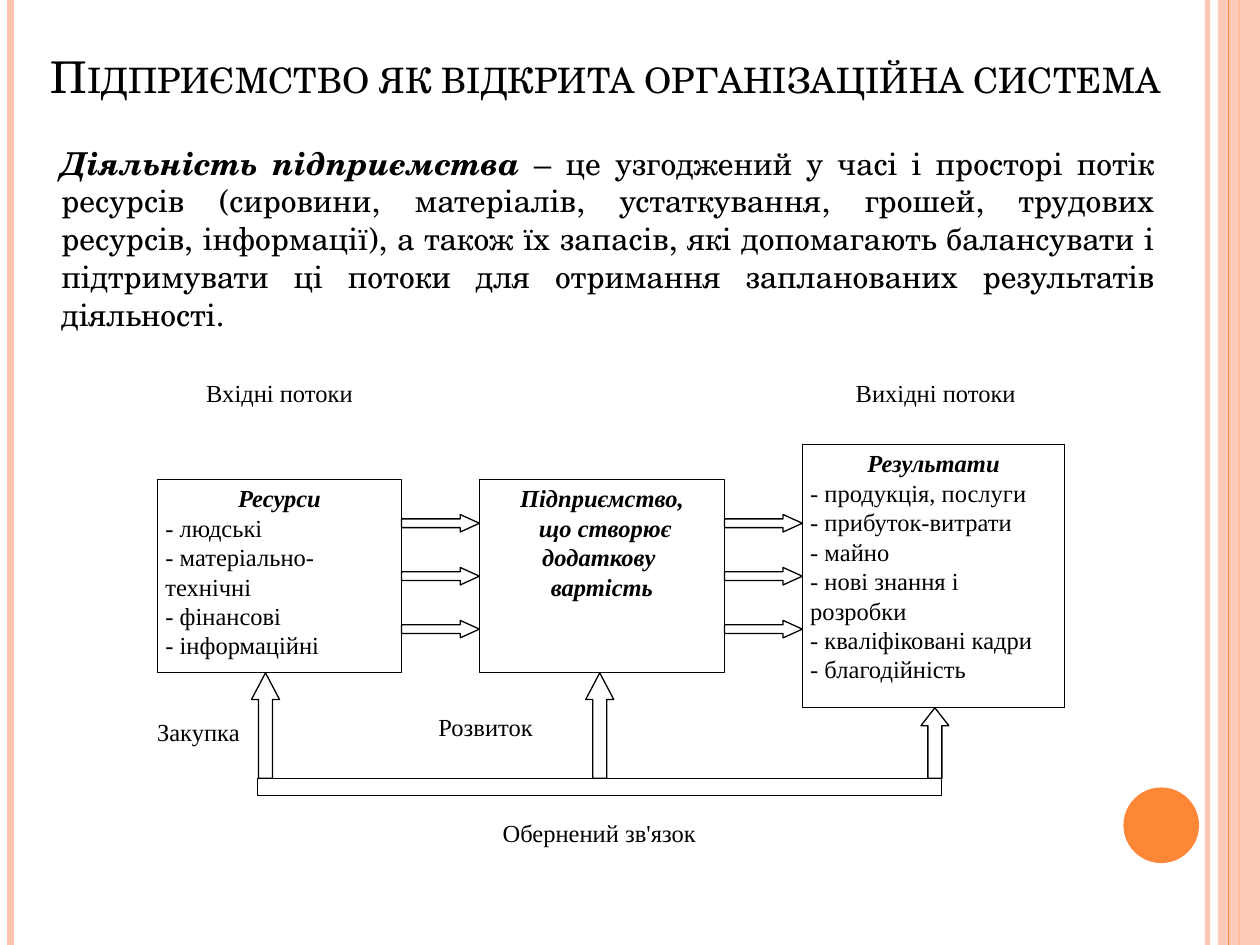
from lxml.etree import SubElement
from pptx import Presentation
from pptx.dml.color import RGBColor
from pptx.enum.shapes import MSO_CONNECTOR, MSO_SHAPE
from pptx.enum.text import MSO_ANCHOR, PP_ALIGN
from pptx.oxml.ns import qn
from pptx.util import Pt

COLORS = {"black": "000000", "white": "FFFFFF", "orange": "FE8637", "peach": "FEC3AE"}
HEADING_FONT, DIAGRAM_FONT = "TeX Gyre Schola", "Times New Roman"
DIAGRAM_SIZE = 14
PAGE_WIDTH, PAGE_HEIGHT = 720, 540


def color(name):
    return RGBColor.from_string(COLORS[name])


def points(box):
    return [Pt(length) for length in box]


def set_alpha(fill_parent, percent):
    rgb = fill_parent.find(".//" + qn("a:srgbClr"))
    SubElement(rgb, qn("a:alpha"), val=str(percent * 1000))


def style_run(run, font, size, emphasis=False):
    run.font.name = font
    run.font.size = Pt(size)
    run.font.bold = run.font.italic = emphasis
    run.font.color.rgb = color("black")


def add_block(page, kind, box, fill="white", line="black"):
    shape = page.shapes.add_shape(kind, *points(box))
    shape.shadow.inherit = False
    shape.fill.solid()
    shape.fill.fore_color.rgb = color(fill)
    if line:
        shape.line.color.rgb = color(line)
        shape.line.width = Pt(0.75)
    else:
        shape.line.fill.background()
    return shape


def add_stripe(page, x, width, name, alpha=100):
    stripe = page.shapes.add_connector(
        MSO_CONNECTOR.STRAIGHT, Pt(x), Pt(0), Pt(x), Pt(PAGE_HEIGHT))
    stripe.line.color.rgb = color(name)
    stripe.line.width = Pt(width)
    properties = stripe._element.spPr
    set_alpha(properties, alpha)
    SubElement(properties, qn("a:effectLst"))


def add_text_box(page, box, heading=None, items=(), line="black",
                 item_align=PP_ALIGN.LEFT):
    """A rectangle with an optional bold italic heading above plain lines."""
    frame = add_block(page, MSO_SHAPE.RECTANGLE, box, line=line).text_frame
    frame.word_wrap = True
    frame.vertical_anchor = MSO_ANCHOR.TOP
    frame.margin_left = frame.margin_right = Pt(4.5)
    frame.margin_top = frame.margin_bottom = Pt(2.25)
    rows = [(heading, PP_ALIGN.CENTER, True)] if heading else []
    rows += [(item, item_align, False) for item in items]
    for index, (text, align, emphasis) in enumerate(rows):
        para = frame.add_paragraph() if index else frame.paragraphs[0]
        para.text = text
        para.alignment = align
        for span in para.runs:
            style_run(span, DIAGRAM_FONT, DIAGRAM_SIZE, emphasis)
        for line_break in para._p.findall(qn("a:br")):
            SubElement(line_break, qn("a:rPr"), sz=str(DIAGRAM_SIZE * 100))


def add_arrow(page, kind, box, head):
    arrow = add_block(page, kind, box)
    arrow.adjustments[0] = 0.5
    arrow.adjustments[1] = head


def add_decoration(page):
    add_stripe(page, 690, 3, "peach", 93)
    add_stripe(page, 6, 4.5, "peach")
    add_stripe(page, 708, 1.5, "orange")
    band = add_block(page, MSO_SHAPE.RECTANGLE, (696, 0, 24, PAGE_HEIGHT), "peach", None)
    set_alpha(band._element.spPr, 87)
    add_stripe(page, 702, 0.75, "orange")
    add_block(page, MSO_SHAPE.OVAL, (642, 450, 43.2, 43.2), "orange", None)


def add_title(page, box):
    title = page.shapes.title
    title.left, title.top, title.width, title.height = points(box)
    frame = title.text_frame
    frame.text = "Підприємство як відкрита організаційна система"
    frame.word_wrap = True
    frame.vertical_anchor = MSO_ANCHOR.BOTTOM
    para = frame.paragraphs[0]
    para.alignment = PP_ALIGN.CENTER
    style_run(para.runs[0], HEADING_FONT, 25)
    para.runs[0].font._element.set("cap", "small")


def add_definition(page, box):
    frame = page.shapes.add_textbox(*points(box)).text_frame
    frame.word_wrap = True
    para = frame.paragraphs[0]
    para.alignment = PP_ALIGN.JUSTIFY
    para.space_before = Pt(6)
    for text, emphasis in (
        ("Діяльність підприємства", True),
        (" – це узгоджений у часі і просторі потік ресурсів (сировини, матеріалів, "
         "устаткування, грошей, трудових ресурсів, інформації), а також їх запасів, "
         "які допомагають балансувати і підтримувати ці потоки для отримання "
         "запланованих результатів діяльності.", False),
    ):
        span = para.add_run()
        span.text = text
        style_run(span, HEADING_FONT, 18, emphasis)


def add_flow_diagram(page, left, top):
    def at(x, y, width, height):
        return left + x, top + y, width, height

    # Captions
    for text, box, line, align in (
        ("Закупка", at(0, 193.5, 73.5, 30), None, PP_ALIGN.RIGHT),
        ("Вхідні потоки", at(22, 0, 139.5, 30), "white", PP_ALIGN.CENTER),
        ("Вихідні потоки", at(397, 0, 139.5, 30), "white", PP_ALIGN.CENTER),
        ("Розвиток", at(161.5, 190.5, 96, 30), None, PP_ALIGN.CENTER),
        ("Обернений зв'язок", at(187, 251, 175, 30), None, PP_ALIGN.CENTER),
    ):
        add_text_box(page, box, items=[text], line=line, item_align=align)

    # Stages
    add_text_box(page, at(22, 60, 139.5, 110.5), "Ресурси", [
        "- людські", "- матеріально-технічні", "- фінансові", "- інформаційні"])
    add_text_box(page, at(206, 60, 140, 110.5),
                 "Підприємство,\n що створює додаткову \nвартість")
    add_text_box(page, at(390.5, 40, 150, 150.5), "Результати", [
        "- продукція, послуги", "- прибуток-витрати", "- майно",
        "- нові знання і розробки", "- кваліфіковані кадри", "- благодійність"])

    # Forward flows
    for x in (161.5, 346):
        for row in range(3):
            add_arrow(page, MSO_SHAPE.RIGHT_ARROW,
                      at(x, 80 + 30.25 * row, 44.5, 10), 1.1)

    # Feedback loop
    bar_top = 230.75
    add_block(page, MSO_SHAPE.RECTANGLE, at(79, bar_top, 391, 10))
    for x, y, head in ((75.75, 170.5, 0.95), (266.75, 170.5, 0.95), (458.25, 190.5, 0.64)):
        add_arrow(page, MSO_SHAPE.UP_ARROW, at(x, y, 16, bar_top - y), head)


def main():
    deck = Presentation()
    deck.slide_width, deck.slide_height = Pt(PAGE_WIDTH), Pt(PAGE_HEIGHT)
    page = deck.slides.add_slide(deck.slide_layouts[5])
    add_decoration(page)
    add_title(page, (11.5, 21.5, 669.5, 40.5))
    add_definition(page, (28, 78.5, 639, 116))
    add_flow_diagram(page, 68, 214)
    deck.save("out.pptx")


if __name__ == "__main__":
    main()
